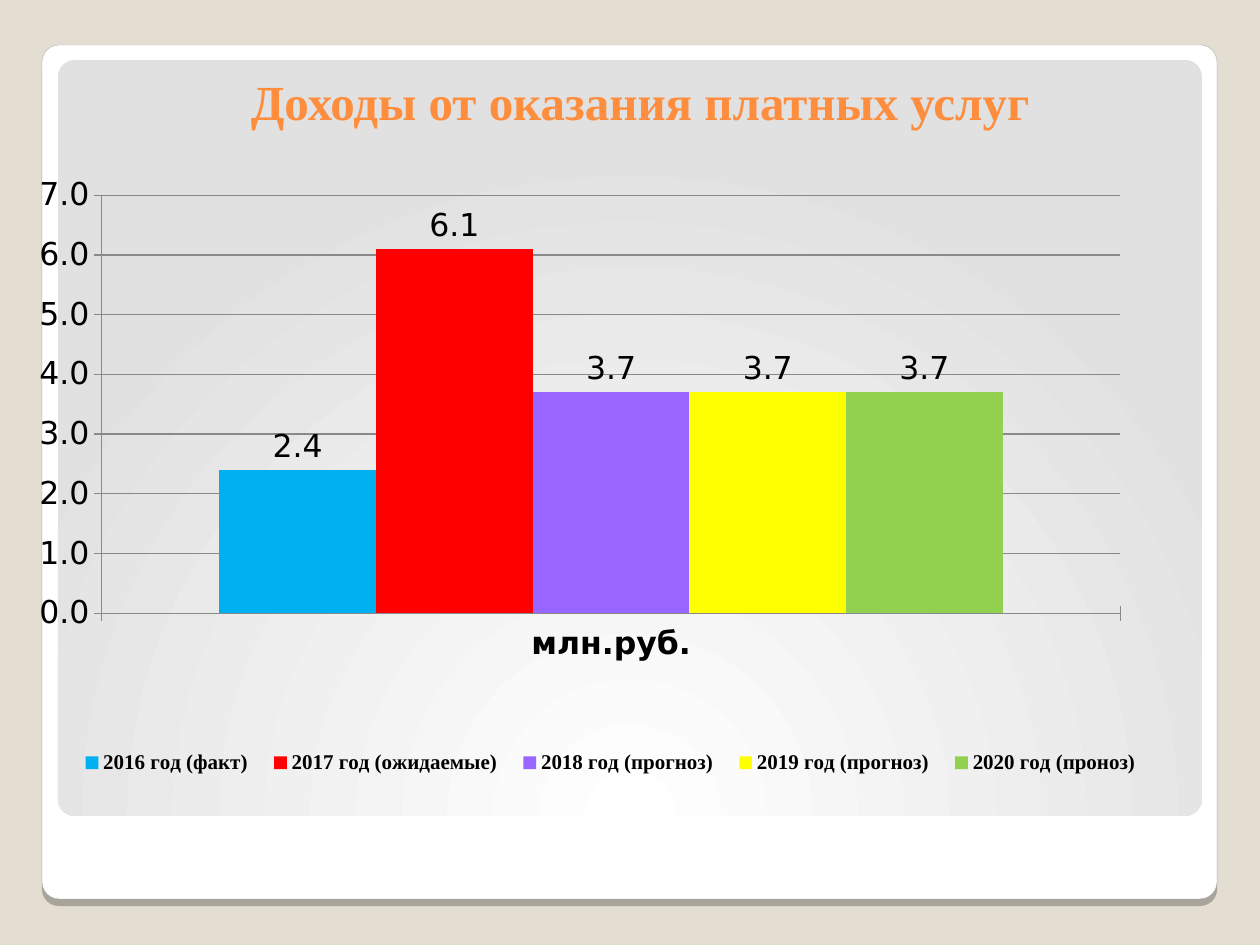
from dataclasses import dataclass

from lxml import etree
from pptx import Presentation
from pptx.chart.data import CategoryChartData
from pptx.dml.color import RGBColor
from pptx.enum.chart import XL_CHART_TYPE, XL_LABEL_POSITION, XL_LEGEND_POSITION, XL_TICK_MARK
from pptx.enum.shapes import MSO_SHAPE
from pptx.enum.text import MSO_ANCHOR, PP_ALIGN
from pptx.oxml import parse_xml
from pptx.oxml.ns import nsdecls, qn
from pptx.util import Emu, Pt

CLUSTERED = XL_CHART_TYPE.COLUMN_CLUSTERED
LABEL_ABOVE = XL_LABEL_POSITION.OUTSIDE_END
LEGEND_BOTTOM = XL_LEGEND_POSITION.BOTTOM
TICK_CROSS = XL_TICK_MARK.CROSS
ROUNDED = MSO_SHAPE.ROUNDED_RECTANGLE
ANCHOR_BOTTOM = MSO_ANCHOR.BOTTOM
CENTER = PP_ALIGN.CENTER

TITLE = "Доходы от оказания платных услуг"
UNIT = "млн.руб."
INCOME = [
    ("2016 год (факт)", 2.4, "00B0F0"),
    ("2017 год (ожидаемые)", 6.1, "FF0000"),
    ("2018 год (прогноз)", 3.7, "9966FF"),
    ("2019 год (прогноз)", 3.7, "FFFF00"),
    ("2020 год (проноз)", 3.7, "92D050"),
]

SLIDE_SIZE = (1260, 945)
CARD_BOX = (42, 45, 1175, 854)
PANEL_BOX = (58, 60, 1144, 756)
TITLE_BOX = (49, 59, 1182, 78)
CHART_BOX = (39, 137, 1142, 777)
PLOT_BOX = (102, 195, 1019, 418)
LEGEND_BOX = (66, 743, 1088, 40)
CORNER = 17


@dataclass(frozen=True)
class Theme:
    background: str = "E3DED1"
    card: str = "FFFFFF"
    card_line: str = "A4A3A3"
    panel_inner: str = "FFFFFF"
    panel_outer: str = "E1E1E1"
    title: str = "FF8D3E"
    text: str = "000000"
    axis: str = "898989"
    heading_font: str = "Times New Roman"
    chart_font: str = "DejaVu Sans"
    title_size: int = 28
    chart_size: int = 18
    legend_size: int = 12


THEME = Theme()


def px(length):
    return Emu(round(length * 914400 / 126))


def place(box):
    return [px(length) for length in box]


def color(code):
    return RGBColor.from_string(code)


def style_font(font, name=THEME.chart_font, size=THEME.chart_size, code=THEME.text, bold=False):
    font.name = name
    font.size = Pt(size)
    font.bold = bold
    font.color.rgb = color(code)


def add_text(page, text, box, **style):
    frame = page.shapes.add_textbox(*place(box)).text_frame
    frame.word_wrap = True
    frame.vertical_anchor = ANCHOR_BOTTOM
    para = frame.paragraphs[0]
    para.alignment = CENTER
    span = para.add_run()
    span.text = text
    style_font(span.font, **style)


def add_rounded(page, box):
    shape = page.shapes.add_shape(ROUNDED, *place(box))
    shape.adjustments[0] = round(CORNER / min(box[2:]), 3)
    shape.shadow.inherit = False
    return shape


def add_card(page):
    card = add_rounded(page, CARD_BOX)
    card.fill.solid()
    card.fill.fore_color.rgb = color(THEME.card)
    card.line.color.rgb = color(THEME.card_line)
    card.line.width = Pt(0.16)
    effects = card._element.spPr.find(qn("a:effectLst"))
    effects.append(parse_xml(
        f'<a:outerShdw {nsdecls("a")} blurRad="0" dist="{Pt(4)}" dir="5400000" algn="t" rotWithShape="0">'
        f'<a:srgbClr val="{THEME.text}"><a:alpha val="25000"/></a:srgbClr></a:outerShdw>'))


def add_panel(page):
    panel = add_rounded(page, PANEL_BOX)
    panel.line.fill.background()
    gradient = parse_xml(
        f'<a:gradFill {nsdecls("a")} rotWithShape="1"><a:gsLst>'
        f'<a:gs pos="0"><a:srgbClr val="{THEME.panel_inner}"/></a:gs>'
        f'<a:gs pos="100000"><a:srgbClr val="{THEME.panel_outer}"/></a:gs></a:gsLst>'
        '<a:path path="circle"><a:fillToRect l="50000" t="175000" r="50000" b="-75000"/></a:path>'
        '</a:gradFill>')
    panel._element.spPr.find(qn("a:prstGeom")).addnext(gradient)


def set_layout(parent, box, after=None, inner=False):
    old = parent.find(qn("c:layout"))
    if old is not None:
        parent.remove(old)
    layout = parse_xml(f'<c:layout {nsdecls("c")}/>')
    manual = etree.SubElement(layout, qn("c:manualLayout"))
    left, top, width, height = CHART_BOX
    values = {
        "xMode": "edge", "yMode": "edge",
        "x": round((box[0] - left) / width, 3), "y": round((box[1] - top) / height, 3),
        "w": round(box[2] / width, 3), "h": round(box[3] / height, 3),
    }
    if inner:
        values = {"layoutTarget": "inner", **values}
    for tag, value in values.items():
        etree.SubElement(manual, qn(f"c:{tag}")).set("val", str(value))
    if after is None:
        parent.insert(0, layout)
    else:
        after.addnext(layout)


def style_line(line):
    line.color.rgb = color(THEME.axis)
    line.width = Pt(0.75)


def style_axis(axis, bold=False):
    axis.major_tick_mark = TICK_CROSS
    style_font(axis.tick_labels.font, bold=bold)
    style_line(axis.format.line)


def add_income_chart(page):
    data = CategoryChartData(number_format="0.0")
    data.categories = [UNIT]
    for name, value, _ in INCOME:
        data.add_series(name, [value])
    chart = page.shapes.add_chart(CLUSTERED, *place(CHART_BOX), data).chart
    chart.has_title = False
    style_font(chart.font)

    plot = chart.plots[0]
    plot.gap_width = 150
    plot.overlap = 0
    plot.vary_by_categories = False
    for series, (_, _, code) in zip(plot.series, INCOME):
        series.format.fill.solid()
        series.format.fill.fore_color.rgb = color(code)
        labels = series.data_labels
        labels.show_value = True
        labels.position = LABEL_ABOVE
        style_font(labels.font)

    style_axis(chart.category_axis, bold=True)
    axis = chart.value_axis
    style_axis(axis)
    axis.minimum_scale, axis.maximum_scale, axis.major_unit = 0, 7, 1
    axis.tick_labels.number_format = "0.0"
    axis.tick_labels.number_format_is_linked = False
    style_line(axis.major_gridlines.format.line)

    chart.has_legend = True
    legend = chart.legend
    legend.position = LEGEND_BOTTOM
    legend.include_in_layout = False
    style_font(legend.font, name=THEME.heading_font, size=THEME.legend_size, bold=True)
    set_layout(legend._element, LEGEND_BOX, after=legend._element.find(qn("c:legendPos")))
    set_layout(chart._chartSpace.chart.plotArea, PLOT_BOX, inner=True)


def main():
    deck = Presentation()
    deck.slide_width, deck.slide_height = place(SLIDE_SIZE)
    page = deck.slides.add_slide(deck.slide_layouts[6])
    page.background.fill.solid()
    page.background.fill.fore_color.rgb = color(THEME.background)
    add_card(page)
    add_panel(page)
    add_text(page, TITLE, TITLE_BOX, name=THEME.heading_font, size=THEME.title_size,
             code=THEME.title, bold=True)
    add_income_chart(page)
    deck.save("out.pptx")


if __name__ == "__main__":
    main()
